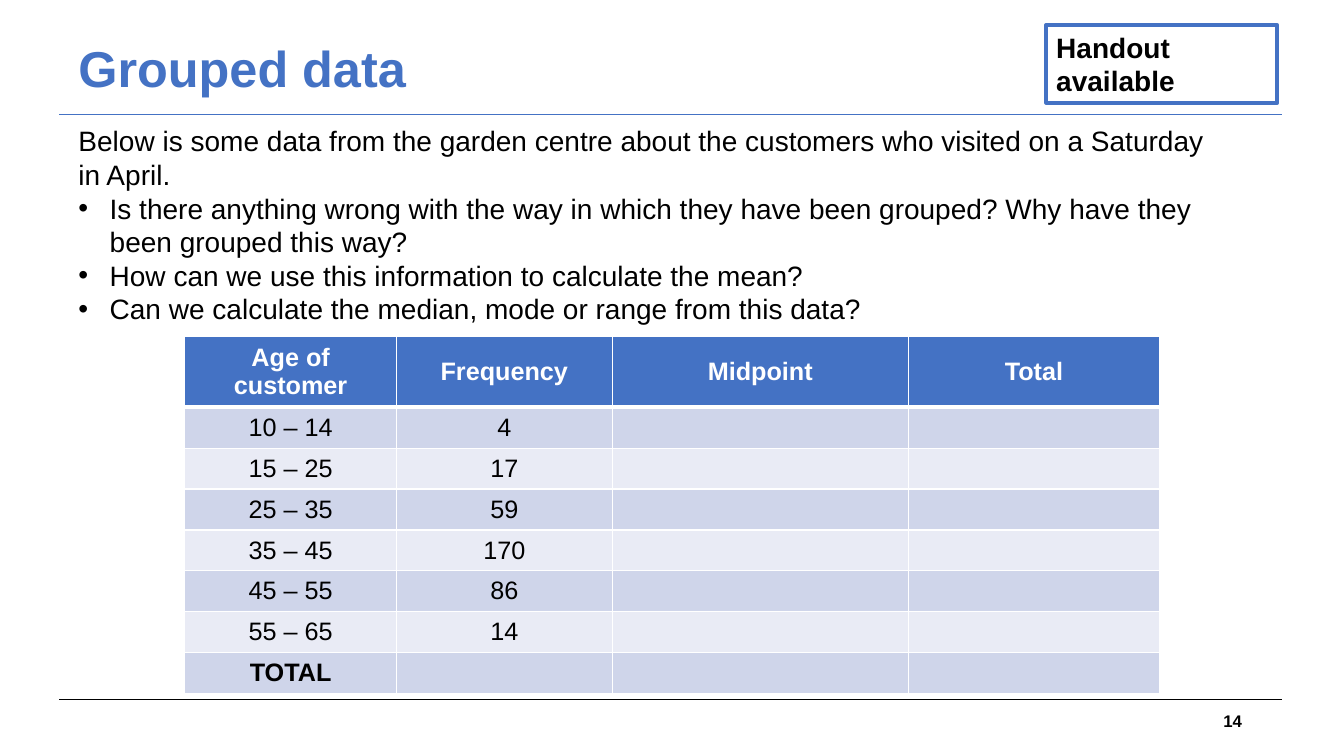
from lxml.etree import SubElement
from pptx import Presentation
from pptx.dml.color import RGBColor
from pptx.enum.shapes import MSO_CONNECTOR, MSO_SHAPE
from pptx.enum.text import MSO_ANCHOR, PP_ALIGN
from pptx.oxml import parse_xml
from pptx.oxml.ns import nsdecls, qn
from pptx.util import Inches, Pt

COLORS = {"accent": "4472C4", "ink": "000000", "paper": "FFFFFF",
          "band_dark": "CFD5EA", "band_light": "E9EBF5"}
FONT = "Arial"
COLUMNS, ROWS = 160, 90
BULLET_INDENT = Inches(0.31)


def color(name):
    return RGBColor.from_string(COLORS[name])


def write(paragraph, text, size=20, ink="ink", bold=False,
          align=PP_ALIGN.LEFT, spacing=None, bullet=False):
    """Fill a paragraph with text; a vertical tab makes a line break."""
    paragraph.text = text
    paragraph.alignment = align
    paragraph.line_spacing = spacing
    for run in paragraph.runs:
        run.font.name, run.font.size, run.font.bold = FONT, Pt(size), bold
        run.font.color.rgb = color(ink)
    if bullet:
        properties = paragraph._p.get_or_add_pPr()
        properties.set("marL", str(BULLET_INDENT))
        properties.set("indent", str(-BULLET_INDENT))
        SubElement(properties, qn("a:buFont")).set("typeface", FONT)
        SubElement(properties, qn("a:buChar")).set("char", "•")


class GridSlide:
    """A blank slide measured in columns and rows of a grid."""

    def __init__(self, deck):
        self.slide = deck.slides.add_slide(deck.slide_layouts[6])
        self.column = deck.slide_width / COLUMNS
        self.row = deck.slide_height / ROWS

    def place(self, left, top, width, height):
        return (round(left * self.column), round(top * self.row),
                round(width * self.column), round(height * self.row))

    def rule(self, row, ink, left=7.08, right=152.64):
        x1, y, x2, _ = self.place(left, row, right, 0)
        rule = self.slide.shapes.add_connector(MSO_CONNECTOR.STRAIGHT, x1, y, x2, y)
        rule.line.color.rgb = color(ink)
        rule.line.width = Pt(0.75)
        SubElement(rule._element.spPr, qn("a:effectLst"))

    def fill_frame(self, frame, paragraphs, anchor, **style):
        frame.word_wrap = True
        frame.vertical_anchor = anchor
        for index, (text, extra) in enumerate(paragraphs):
            paragraph = frame.add_paragraph() if index else frame.paragraphs[0]
            write(paragraph, text, **style, **extra)

    def text(self, area, paragraphs, anchor=MSO_ANCHOR.TOP, **style):
        box = self.slide.shapes.add_textbox(*self.place(*area))
        self.fill_frame(box.text_frame, paragraphs, anchor, **style)

    def badge(self, area, text, **style):
        badge = self.slide.shapes.add_shape(MSO_SHAPE.RECTANGLE, *self.place(*area))
        badge.shadow.inherit = False
        badge.fill.background()
        badge.line.color.rgb = color("accent")
        badge.line.width = Pt(3)
        self.fill_frame(badge.text_frame, [(text, {})], MSO_ANCHOR.TOP, **style)

    def border(self, cell, **widths):
        properties = cell._tc.get_or_add_tcPr()
        for index, side in enumerate("LRTB"):
            properties.insert(index, parse_xml(
                f'<a:ln{side} {nsdecls("a")} w="{Pt(widths.get(side, 1))}"><a:solidFill>'
                f'<a:srgbClr val="{COLORS["paper"]}"/></a:solidFill></a:ln{side}>'))

    def table(self, left, top, widths, heights, records):
        area = self.place(left, top, sum(widths), sum(heights))
        table = self.slide.shapes.add_table(len(heights), len(widths), *area).table
        table.first_row = table.horz_banding = False
        for column, width in zip(table.columns, widths):
            column.width = round(width * self.column)
        for row, height in zip(table.rows, heights):
            row.height = round(height * self.row)
        for number, record in enumerate(records):
            header = number == 0
            band = "accent" if header else ("band_light", "band_dark")[number % 2]
            for index, text in enumerate(record):
                cell = table.cell(number, index)
                cell.vertical_anchor = MSO_ANCHOR.MIDDLE
                cell.fill.solid()
                cell.fill.fore_color.rgb = color(band)
                self.border(cell, B=3 if header else 1, T=3 if number == 1 else 1)
                if text:
                    write(cell.text_frame.paragraphs[0], text, size=18,
                          ink="paper" if header else "ink",
                          bold=header or text == "TOTAL", align=PP_ALIGN.CENTER)


def main():
    deck = Presentation()
    deck.slide_width, deck.slide_height = Inches(13.33), Inches(7.5)
    page = GridSlide(deck)

    # Rules and heading
    page.rule(83.28, "ink")
    page.rule(13.68, "accent")
    page.text((8.16, 1.2, 103.32, 14.52), [("Grouped data", {})],
              anchor=MSO_ANCHOR.MIDDLE, size=36, ink="accent", bold=True, spacing=0.9)

    # Ages of customers
    frequencies = {"10 – 14": 4, "15 – 25": 17, "25 – 35": 59,
                   "35 – 45": 170, "45 – 55": 86, "55 – 65": 14}
    records = [("Age of customer", "Frequency", "Midpoint", "Total")]
    records += [(ages, str(count), "", "") for ages, count in frequencies.items()]
    records.append(("TOTAL", "", "", ""))
    page.table(22, 40.08, widths=(25.2, 25.68, 35.28, 29.88),
               heights=[7.8] + [4.87] * (len(records) - 1), records=records)

    # Page number
    page.text((113.04, 83.4, 36, 4.8), [("14", {})], anchor=MSO_ANCHOR.MIDDLE,
              size=12, bold=True, align=PP_ALIGN.RIGHT)

    # Introduction and questions
    questions = (
        "Is there anything wrong with the way in which they have been grouped? "
        "Why have they been grouped this way?",
        "How can we use this information to calculate the mean?",
        "Can we calculate the median, mode or range from this data?",
    )
    introduction = ("Below is some data from the garden centre about the customers "
                    "who visited on a Saturday in April.")
    page.text((8.16, 14.16, 138.84, 25.44),
              [(introduction, {})] + [(question, {"bullet": True}) for question in questions])

    # Handout badge
    page.badge((124.56, 3, 27.48, 9.24), "Handout\vavailable", bold=True)

    deck.save("out.pptx")


if __name__ == "__main__":
    main()
